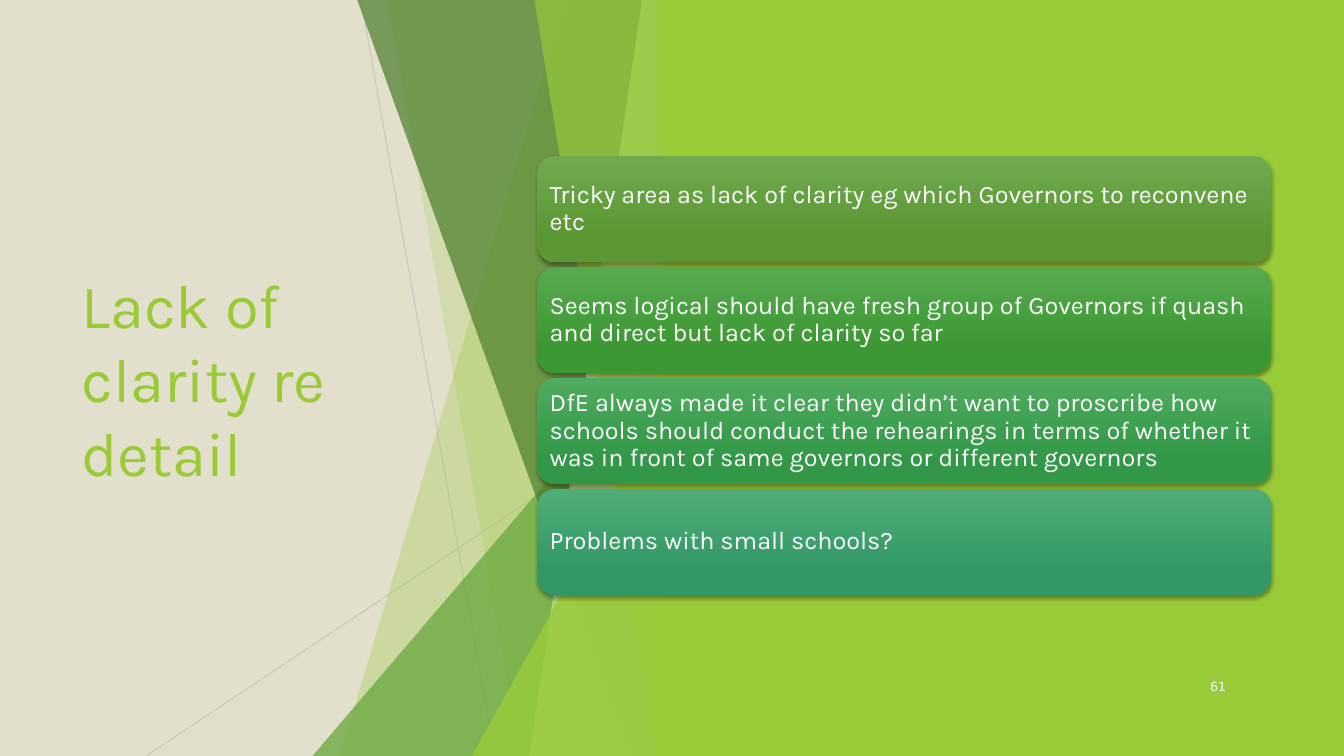
from lxml import etree
from pptx import Presentation
from pptx.dml.color import RGBColor
from pptx.enum.shapes import MSO_CONNECTOR, MSO_SHAPE
from pptx.enum.text import MSO_ANCHOR, PP_ALIGN
from pptx.oxml.ns import qn
from pptx.util import Inches, Pt

STRAIGHT = MSO_CONNECTOR.STRAIGHT
RECTANGLE = MSO_SHAPE.RECTANGLE
ROUNDED = MSO_SHAPE.ROUNDED_RECTANGLE
TRIANGLE = MSO_SHAPE.ISOSCELES_TRIANGLE
MIDDLE = MSO_ANCHOR.MIDDLE
LEFT, RIGHT = PP_ALIGN.LEFT, PP_ALIGN.RIGHT

WIDTH, HEIGHT = 13.33, 7.5
FACET_EDGE = 6.66
CARD_TOP, CARD_PITCH = 1.55, 1.1

CARDS = [
    ("Tricky area as lack of clarity eg which Governors to reconvene etc",
     "6FAA4F", "5B9732"),
    ("Seems logical should have fresh group of Governors if quash and direct "
     "but lack of clarity so far", "56AA4F", "3C9832"),
    ("DfE always made it clear they didn’t want to proscribe how schools should "
     "conduct the rehearings in terms of whether it was in front of same "
     "governors or different governors", "4FAB5E", "329847"),
    ("Problems with small schools?", "4FAC79", "329966"),
]


def color(hex_string):
    return RGBColor.from_string(hex_string)


def set_opacity(properties, percent):
    """Make the first colour found inside the given XML element translucent."""
    rgb = properties.find(".//" + qn("a:srgbClr"))
    etree.SubElement(rgb, qn("a:alpha"), val=str(percent * 1000))


class SlideBuilder:
    """Holds the slide and its style, and adds one element per call."""

    font = "Karla"
    text_color = "FFFFFF"
    accent = "99CB38"
    background = "E2DFCC"
    hairline = "BFBFBF"

    def __init__(self, presentation):
        self.slide = presentation.slides.add_slide(presentation.slide_layouts[6])
        self.shapes = self.slide.shapes
        fill = self.slide.background.fill
        fill.solid()
        fill.fore_color.rgb = color(self.background)

    def paint(self, shape, fill_color, opacity=100):
        shape.shadow.inherit = False
        shape.line.fill.background()
        shape.fill.solid()
        shape.fill.fore_color.rgb = color(fill_color)
        if opacity < 100:
            set_opacity(shape._element.spPr, opacity)

    def line(self, start, end, opacity):
        hairline = self.shapes.add_connector(
            STRAIGHT, *(Inches(value) for value in start + end))
        hairline.line.color.rgb = color(self.hairline)
        hairline.line.width = Pt(0.75)
        properties = hairline._element.spPr
        set_opacity(properties, opacity)
        etree.SubElement(properties, qn("a:effectLst"))

    def facet(self, top_x, bottom_x, fill_color, opacity):
        """Add a slanted panel reaching from its left side to the facet edge."""
        top = -0.01
        outline = self.shapes.build_freeform(Inches(top_x), Inches(top))
        corners = [(FACET_EDGE, top), (FACET_EDGE, HEIGHT), (bottom_x, HEIGHT)]
        outline.add_line_segments([(Inches(x), Inches(y)) for x, y in corners])
        self.paint(outline.convert_to_shape(), fill_color, opacity)

    def shape(self, kind, left, top, width, height):
        return self.shapes.add_shape(
            kind, Inches(left), Inches(top), Inches(width), Inches(height))

    def corner(self, left, top, fill_color, opacity):
        """Add a right triangle standing on the bottom edge of the slide."""
        triangle = self.shape(
            TRIANGLE, left, top, FACET_EDGE - left, HEIGHT - top)
        triangle.adjustments[0] = 1
        self.paint(triangle, fill_color, opacity)

    def panel(self, left):
        self.paint(self.shape(RECTANGLE, left, 0, WIDTH - left, HEIGHT),
                   self.accent)

    def fill_frame(self, frame, text, size, text_color, font, align):
        frame.word_wrap = True
        frame.vertical_anchor = MIDDLE
        paragraph = frame.paragraphs[0]
        paragraph.alignment = align
        run = paragraph.add_run()
        run.text = text
        run.font.size = Pt(size)
        run.font.name = font
        run.font.color.rgb = color(text_color)
        return paragraph

    def text(self, left, top, width, height, text, size,
             text_color=text_color, font=font, align=LEFT):
        box = self.shapes.add_textbox(
            Inches(left), Inches(top), Inches(width), Inches(height))
        self.fill_frame(box.text_frame, text, size, text_color, font, align)

    def card(self, top, text, light, dark):
        card = self.shape(ROUNDED, 5.33, top, 7.28, 1.05)
        card.line.fill.background()
        card.fill.gradient()
        card.fill.gradient_angle = 270
        for stop, shade, position in zip(
                card.fill.gradient_stops, (light, dark), (0, 0.78)):
            stop.color.rgb = color(shade)
            stop.position = position
        self.drop_shadow(card)
        frame = card.text_frame
        frame.margin_left = frame.margin_right = Inches(0.07)
        frame.margin_top = frame.margin_bottom = Inches(0.07)
        paragraph = self.fill_frame(
            frame, text, 18, self.text_color, self.font, LEFT)
        paragraph.line_spacing = 0.9

    def drop_shadow(self, shape):
        shape.shadow.inherit = False
        effects = shape._element.spPr.find(qn("a:effectLst"))
        shadow = etree.SubElement(
            effects, qn("a:outerShdw"), blurRad=str(Pt(3)), dist=str(Pt(2)),
            dir="5400000", algn="ctr", rotWithShape="0")
        etree.SubElement(shadow, qn("a:srgbClr"), val="000000")
        set_opacity(shadow, 35)


def main():
    presentation = Presentation()
    presentation.slide_width = Inches(WIDTH)
    presentation.slide_height = Inches(HEIGHT)
    builder = SlideBuilder(presentation)

    builder.text(0.71, 1.51, 3.88, 4.48, "Lack of clarity re detail", 44,
                 builder.accent)

    builder.line((3.58, 0), (4.91, HEIGHT), 75)
    builder.line((FACET_EDGE, 4.03), (1.45, HEIGHT), 80)
    builder.facet(5.61, 3.37, builder.accent, 30)
    builder.facet(3.84, 5.16, builder.accent, 20)
    builder.corner(3.1, 3.33, "63A537", 72)
    builder.facet(3.54, 6.24, "4A7C29", 70)
    builder.facet(6.37, 5.25, "C2E088", 70)
    builder.facet(5.3, 6.51, builder.accent, 65)
    builder.corner(4.68, 3.93, builder.accent, 80)
    builder.panel(6.54)

    builder.text(11.51, 6.61, 0.75, 0.4, "61", 9,
                 font="DejaVu Sans", align=RIGHT)
    for index, (text, light, dark) in enumerate(CARDS):
        builder.card(CARD_TOP + index * CARD_PITCH, text, light, dark)

    presentation.save("out.pptx")


if __name__ == "__main__":
    main()
